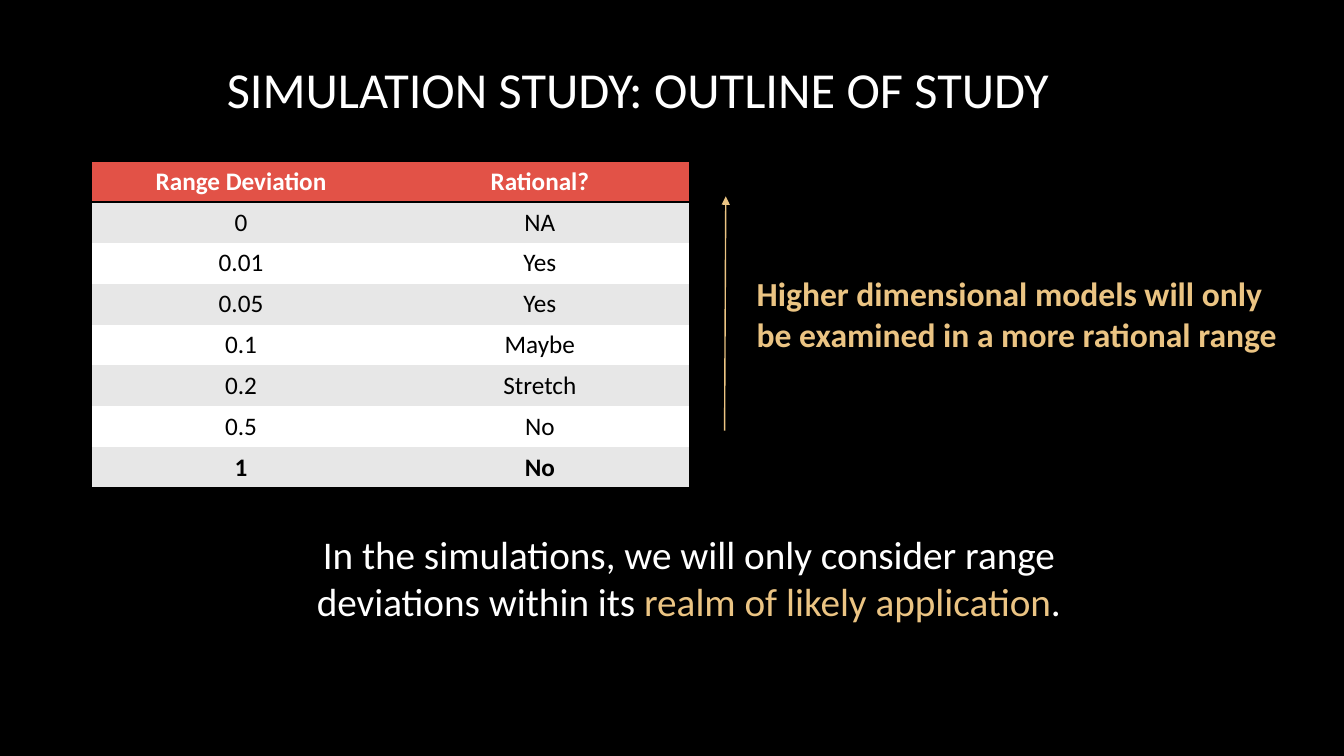
from lxml.etree import SubElement
from pptx import Presentation
from pptx.dml.color import RGBColor
from pptx.enum.shapes import MSO_CONNECTOR
from pptx.enum.text import MSO_ANCHOR, PP_ALIGN
from pptx.oxml import parse_xml
from pptx.oxml.ns import nsdecls, qn
from pptx.util import Cm, Pt

COLORS = {
    "black": "000000",
    "white": "FFFFFF",
    "red": "E25247",
    "gray": "E7E7E7",
    "gold": "EBC483",
}


def color(name):
    return RGBColor.from_string(COLORS[name])


def write_text(frame, *parts, size, bold=False, align=PP_ALIGN.CENTER):
    frame.word_wrap = True
    paragraph = frame.paragraphs[0]
    paragraph.alignment = align
    for text, color_name in parts:
        run = paragraph.add_run()
        run.text = text
        run.font.name = "Calibri"
        run.font.size = Pt(size)
        run.font.bold = bold
        run.font.color.rgb = color(color_name)


presentation = Presentation()
presentation.slide_width = Cm(33.87)
presentation.slide_height = Cm(19.05)
slide = presentation.slides.add_slide(presentation.slide_layouts[6])
slide.background.fill.solid()
slide.background.fill.fore_color.rgb = color("black")

title = slide.shapes.add_textbox(Cm(2.01), Cm(1.27), Cm(28.14), Cm(1.85))
title.text_frame.vertical_anchor = MSO_ANCHOR.BOTTOM
write_text(title.text_frame, ("SIMULATION STUDY: OUTLINE OF STUDY", "white"), size=36)

deviations = [
    ("Range Deviation", "Rational?"),
    ("0", "NA"),
    ("0.01", "Yes"),
    ("0.05", "Yes"),
    ("0.1", "Maybe"),
    ("0.2", "Stretch"),
    ("0.5", "No"),
    ("1", "No"),
]
last_row = len(deviations) - 1
table_frame = slide.shapes.add_table(
    len(deviations), 2, Cm(2.31), Cm(4.06), Cm(15.06), Cm(8.24)
)
table = table_frame.table
table.horz_banding = False
table._tbl.tblPr.find(qn("a:tableStyleId")).text = "{2D5ABB26-0587-4C30-8999-92F81FD0307C}"

for row_index, values in enumerate(deviations):
    is_header = row_index == 0
    if is_header:
        fill_name, edges = "red", ("lnB", "lnT")
    else:
        fill_name = "gray" if row_index % 2 else "white"
        edges = ("lnB",) if row_index == last_row else ()
    for column_index, value in enumerate(values):
        cell = table.cell(row_index, column_index)
        cell.vertical_anchor = MSO_ANCHOR.MIDDLE
        cell.fill.solid()
        cell.fill.fore_color.rgb = color(fill_name)
        write_text(
            cell.text_frame,
            (value, "white" if is_header else "black"),
            size=18,
            bold=row_index in (0, last_row),
        )
        for edge in edges:
            border = parse_xml(
                f'<a:{edge} {nsdecls("a")} w="{Pt(2)}"><a:solidFill>'
                f'<a:srgbClr val="{COLORS["black"]}"/></a:solidFill></a:{edge}>'
            )
            cell._tc.get_or_add_tcPr().insert(0, border)

arrow = slide.shapes.add_connector(
    MSO_CONNECTOR.STRAIGHT, Cm(18.26), Cm(10.85), Cm(18.29), Cm(4.95)
)
arrow.line.color.rgb = color("gold")
arrow.line.width = Pt(1)
SubElement(arrow.line._get_or_add_ln(), qn("a:tailEnd"), type="triangle")
SubElement(arrow._element.spPr, qn("a:effectLst"))

range_note = slide.shapes.add_textbox(Cm(18.82), Cm(6.76), Cm(13.67), Cm(2.31))
write_text(
    range_note.text_frame,
    ("Higher dimensional models will only be examined in a more rational range", "gold"),
    size=24,
    bold=True,
    align=PP_ALIGN.LEFT,
)

conclusion = slide.shapes.add_textbox(Cm(7.01), Cm(13.23), Cm(20.7), Cm(2.64))
write_text(
    conclusion.text_frame,
    ("In the simulations, we will only consider range deviations within its ", "white"),
    ("realm of likely application", "gold"),
    (".", "white"),
    size=28,
)

presentation.save("out.pptx")
